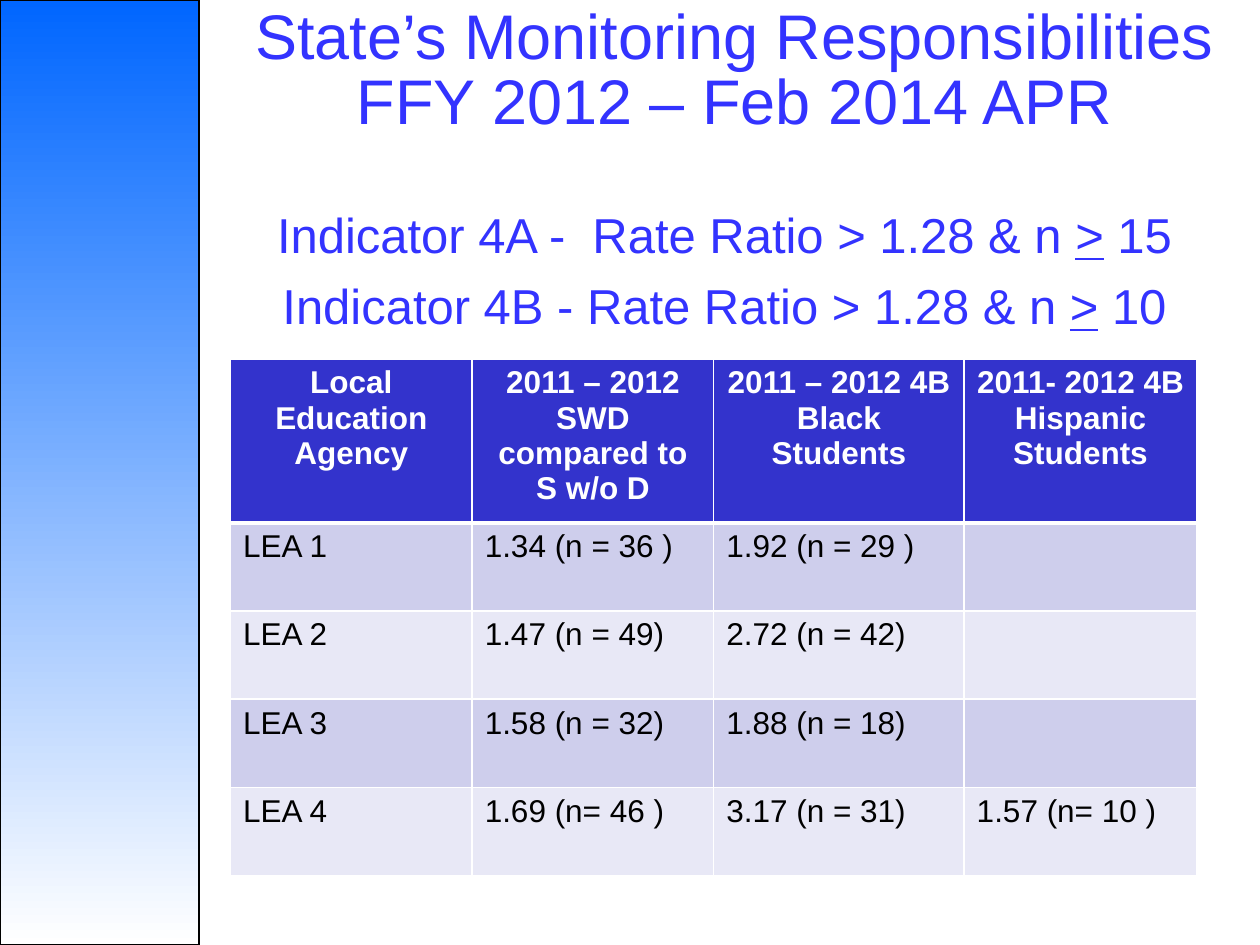
from lxml import etree
from pptx import Presentation
from pptx import util as u
from pptx.dml.color import RGBColor
from pptx.enum import shapes, text
from pptx.oxml import ns

WIDTH, HEIGHT = u.Inches(10), u.Inches(7.5)
FONT = "Arial"
BLUE, HEADER, WHITE, BLACK = "3333FF", "3333CC", "FFFFFF", "000000"
BANDS = ["CECEEC", "E8E8F6"]

TITLE_LINES = ["State’s Monitoring Responsibilities", "FFY 2012 – Feb 2014 APR"]
INDICATORS = [
    ("Indicator 4A -  Rate Ratio > 1.28 & n ", ">", " 15"),
    ("Indicator 4B - Rate Ratio > 1.28 & n ", ">", " 10"),
]
HEADINGS = [
    ["Local Education Agency"],
    ["2011 – 2012", "SWD compared to S w/o D"],
    ["2011 – 2012 4B", "Black Students"],
    ["2011- 2012 4B", "Hispanic", "Students"],
]
AGENCIES = [
    ["LEA 1", "1.34 (n = 36 )", "1.92 (n = 29 )", ""],
    ["LEA 2", "1.47 (n = 49)", "2.72 (n = 42)", ""],
    ["LEA 3", "1.58 (n = 32)", "1.88 (n = 18)", ""],
    ["LEA 4", "1.69 (n= 46 )", "3.17 (n = 31)", "1.57 (n= 10 )"],
]
COLUMN_WIDTHS = [1.92, 1.92, 1.99, 1.85]
HEADER_HEIGHT, AGENCY_HEIGHT = 1.2, 0.7


def colour(value):
    return RGBColor.from_string(value)


def box(left, top, width, height):
    """Turn shares of the slide into a box in slide units."""
    return (int(WIDTH * left), int(HEIGHT * top),
            int(WIDTH * width), int(HEIGHT * height))


def add_run(paragraph, words, size, shade, bold=False, underline=False):
    run = paragraph.add_run()
    run.text = words
    font = run.font
    font.name, font.size = FONT, u.Pt(size)
    font.bold, font.underline = bold, underline
    font.color.rgb = colour(shade)


def paragraphs(frame, count):
    """Return the first paragraph of a frame and as many more as needed."""
    return [frame.paragraphs[0]] + [frame.add_paragraph() for _ in range(count - 1)]


def add_side_panel(slide, area):
    panel = slide.shapes.add_shape(shapes.MSO_SHAPE.RECTANGLE, *area)
    panel.shadow.inherit = False
    panel.fill.gradient()
    panel.fill.gradient_angle = 270
    for stop, shade, position in zip(panel.fill.gradient_stops, ["0066FF", WHITE], [0, 1]):
        stop.color.rgb = colour(shade)
        stop.position = position
    panel.line.color.rgb = colour(BLACK)
    panel.line.width = u.Pt(0.75)


def place_title(slide, area):
    title = slide.shapes.title
    title.left, title.top, title.width, title.height = area
    frame = title.text_frame
    frame.word_wrap = True
    frame.auto_size = text.MSO_AUTO_SIZE.NONE
    frame.vertical_anchor = text.MSO_ANCHOR.BOTTOM
    frame.margin_left = frame.margin_right = frame.margin_top = u.Inches(0.05)
    frame.margin_bottom = u.Inches(0.57)
    heading = frame.paragraphs[0]
    heading.alignment = text.PP_ALIGN.CENTER
    heading.line_spacing = 0.85
    for number, line in enumerate(TITLE_LINES):
        if number:
            heading.add_line_break()
        add_run(heading, line, 36, BLUE)


def add_indicators(slide, area):
    frame = slide.shapes.add_textbox(*area).text_frame
    frame.word_wrap = True
    for indicator, parts in zip(paragraphs(frame, len(INDICATORS)), INDICATORS):
        indicator.alignment = text.PP_ALIGN.CENTER
        indicator.space_before = u.Pt(7)
        for words in parts:
            add_run(indicator, words, 28, BLUE, underline=words == ">")


def set_borders(cell, bottom):
    properties = cell._tc.get_or_add_tcPr()
    for side, width in [("L", 1), ("R", 1), ("T", 1), ("B", bottom)]:
        line = etree.SubElement(properties, ns.qn(f"a:ln{side}"), w=str(u.Pt(width)))
        fill = etree.SubElement(line, ns.qn("a:solidFill"))
        etree.SubElement(fill, ns.qn("a:srgbClr"), val=WHITE)


def fill_cell(cell, lines, shade, is_header):
    set_borders(cell, 3 if is_header else 1)
    cell.fill.solid()
    cell.fill.fore_color.rgb = colour(shade)
    for paragraph, line in zip(paragraphs(cell.text_frame, len(lines)), lines):
        paragraph.alignment = text.PP_ALIGN.CENTER if is_header else text.PP_ALIGN.LEFT
        if line:
            add_run(paragraph, line, 18, WHITE if is_header else BLACK, bold=is_header)


def add_agency_table(slide, area):
    rows = [HEADINGS] + [[[value] for value in agency] for agency in AGENCIES]
    table = slide.shapes.add_table(len(rows), len(HEADINGS), *area).table
    # Columns and rows share the area in proportion
    for column, width in zip(table.columns, COLUMN_WIDTHS):
        column.width = int(area[2] * width / sum(COLUMN_WIDTHS))
    heights = [HEADER_HEIGHT] + [AGENCY_HEIGHT] * len(AGENCIES)
    for row, height in zip(table.rows, heights):
        row.height = int(area[3] * height / sum(heights))
    for r, row in enumerate(rows):
        shade = BANDS[(r - 1) % 2] if r else HEADER
        for c, lines in enumerate(row):
            fill_cell(table.cell(r, c), lines, shade, is_header=r == 0)


def main():
    deck = Presentation()
    deck.slide_width, deck.slide_height = WIDTH, HEIGHT
    slide = deck.slides.add_slide(deck.slide_layouts[5])
    add_side_panel(slide, box(0, 0, 0.158, 1))
    place_title(slide, box(0.183, 0.044, 0.8, 0.177))
    add_indicators(slide, box(0.15, 0.21, 0.85, 0.16))
    add_agency_table(slide, box(0.183, 0.38, 0.767, 0.533))
    deck.save("out.pptx")


if __name__ == "__main__":
    main()
